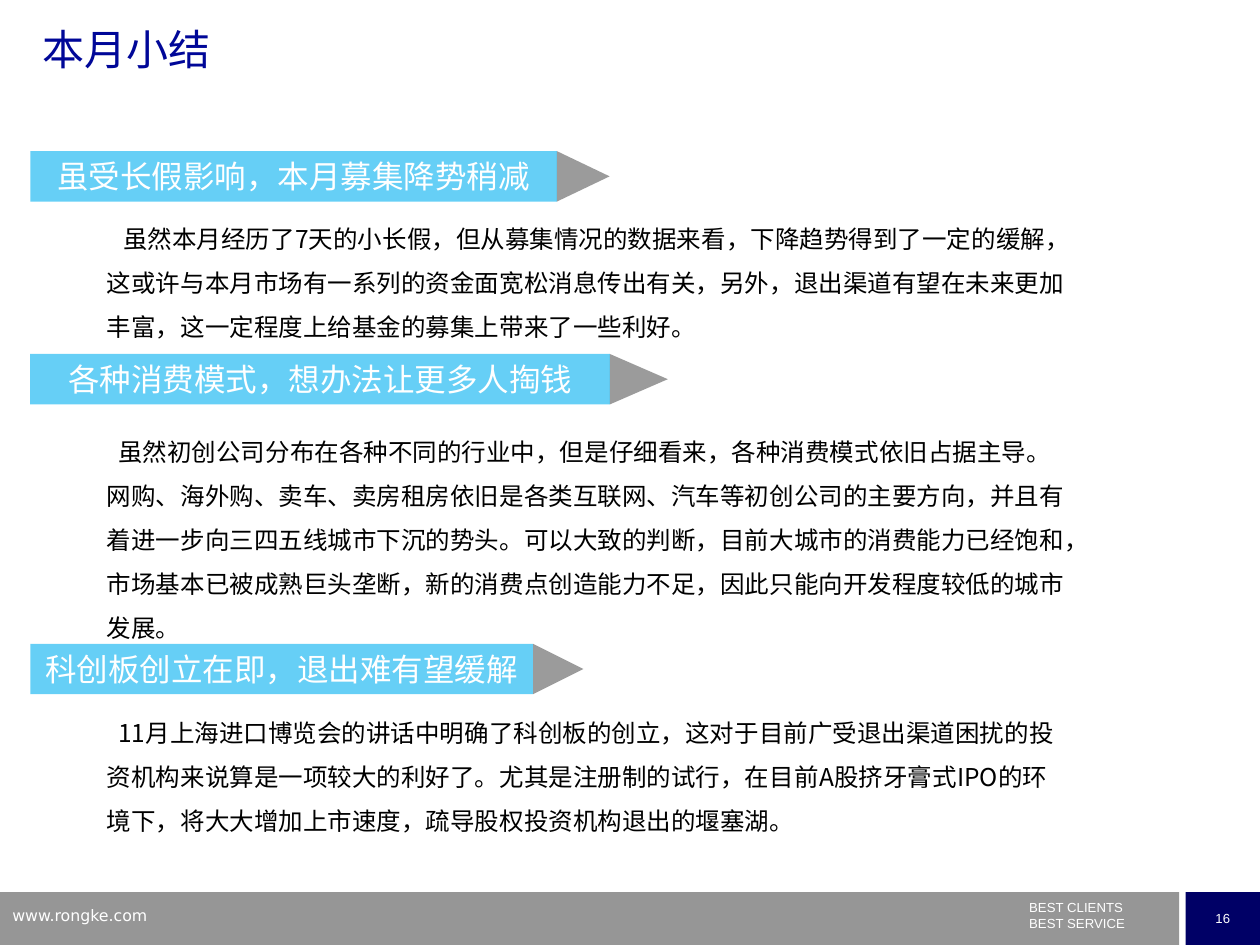
"""Build the monthly summary slide with three arrow headings and their paragraphs."""
from lxml import etree
from pptx import Presentation
from pptx import util as u
from pptx.dml.color import RGBColor
from pptx.enum import shapes, text
from pptx.oxml.ns import qn

COLORS = {"title": "000798", "bar": "00B0F0", "tip": "595959", "footer": "969696",
          "page": "000066", "white": "FFFFFF", "black": "000000"}
CJK = "Noto Sans CJK SC"
TITLE = "本月小结"
SECTIONS = [
    {"heading": "虽受长假影响，本月募集降势稍减", "top": 1.2, "width": 4.18,
     "body": "虽然本月经历了7天的小长假，但从募集情况的数据来看，下降趋势得到了一定的缓解，"
             "这或许与本月市场有一系列的资金面宽松消息传出有关，另外，退出渠道有望在未来更加"
             "丰富，这一定程度上给基金的募集上带来了一些利好。",
     "body_top": 1.61, "body_height": 1.11, "indent": 0.13},
    {"heading": "各种消费模式，想办法让更多人掏钱", "top": 2.81, "width": 4.6,
     "body": "虽然初创公司分布在各种不同的行业中，但是仔细看来，各种消费模式依旧占据主导。"
             "网购、海外购、卖车、卖房租房依旧是各类互联网、汽车等初创公司的主要方向，并且有"
             "着进一步向三四五线城市下沉的势头。可以大致的判断，目前大城市的消费能力已经饱和，"
             "市场基本已被成熟巨头垄断，新的消费点创造能力不足，因此只能向开发程度较低的城市"
             "发展。",
     "body_top": 3.3, "body_height": 1.81, "indent": 0.09},
    {"heading": "科创板创立在即，退出难有望缓解", "top": 5.11, "width": 3.99,
     "body": "11月上海进口博览会的讲话中明确了科创板的创立，这对于目前广受退出渠道困扰的投"
             "资机构来说算是一项较大的利好了。尤其是注册制的试行，在目前A股挤牙膏式IPO的"
             "环境下，将大大增加上市速度，疏导股权投资机构退出的堰塞湖。",
     "body_top": 5.53, "body_height": 1.11, "indent": 0.09},
]
WEBSITE = "www.rongke.com"
SLOGAN = ["BEST CLIENTS", "BEST SERVICE"]
PAGE_NUMBER = "16"
BAR_LEFT, BAR_HEIGHT, OPACITY = 0.24, 0.4, 60


def write(shape, lines, size, color, font=CJK, align=text.PP_ALIGN.LEFT,
          spacing=None, indent=0, wrap=True):
    frame = shape.text_frame
    frame.word_wrap = wrap
    frame.text = "\n".join(lines)
    for para in frame.paragraphs:
        para.alignment = align
        para.line_spacing = spacing
        if indent:
            para._p.get_or_add_pPr().set("indent", str(u.Inches(indent)))
        para.font.size = u.Pt(size)
        para.font.color.rgb = RGBColor.from_string(COLORS[color])
        para.font.name = font
        for span in para.runs:
            span.font.name = font
            east_asian = etree.SubElement(span._r.get_or_add_rPr(), qn("a:ea"))
            east_asian.set("typeface", font)
    return frame


def add_box(parent, left, top, width, height):
    return parent.add_textbox(*map(u.Inches, (left, top, width, height)))


def add_block(parent, kind, left, top, width, height, color, opacity=100):
    block = parent.add_shape(kind, *map(u.Inches, (left, top, width, height)))
    block.shadow.inherit = False
    block.fill.solid()
    block.fill.fore_color.rgb = RGBColor.from_string(COLORS[color])
    block.line.fill.background()
    if opacity < 100:
        fill_color = block._element.spPr.find(qn("a:solidFill"))[0]
        etree.SubElement(fill_color, qn("a:alpha")).set("val", str(opacity * 1000))
    block.text_frame.vertical_anchor = text.MSO_ANCHOR.MIDDLE
    return block


def add_footer(page):
    rectangle = shapes.MSO_SHAPE.RECTANGLE
    add_block(page.shapes, rectangle, 0, 7.08, 9.36, 0.42, "footer")
    number = add_block(page.shapes, rectangle, 9.41, 7.08, 0.59, 0.42, "page")
    write(number, [PAGE_NUMBER], 7.5, "white", "Arial", text.PP_ALIGN.CENTER, wrap=False)
    slogan = add_box(page.shapes, 8.07, 7.14, 1.5, 0.29)
    write(slogan, SLOGAN, 7.5, "white", "Arial").margin_top = 0
    write(add_box(page.shapes, 0, 7.14, 2.4, 0.26), [WEBSITE], 9, "white", "DejaVu Sans")


def add_section(page, section):
    top, width = section["top"], section["width"]
    arrow = page.shapes.add_group_shape().shapes
    bar = add_block(arrow, shapes.MSO_SHAPE.RECTANGLE, BAR_LEFT, top, width, BAR_HEIGHT,
                    "bar", OPACITY)
    write(bar, [section["heading"]], 18, "white", align=text.PP_ALIGN.CENTER)
    length = width / 10
    tip = add_block(arrow, shapes.MSO_SHAPE.ISOSCELES_TRIANGLE,
                    BAR_LEFT + width + (length - BAR_HEIGHT) / 2,
                    top + (BAR_HEIGHT - length) / 2, BAR_HEIGHT, length, "tip", OPACITY)
    tip.rotation = 90
    body = add_box(page.shapes, 0.75, section["body_top"], 7.84, section["body_height"])
    write(body, [section["body"]], 14, "black", spacing=1.5, indent=section["indent"])


def main():
    deck = Presentation()
    deck.slide_width, deck.slide_height = u.Inches(10), u.Inches(7.5)
    page = deck.slides.add_slide(deck.slide_layouts[6])
    add_footer(page)
    write(add_box(page.shapes, 0.24, 0.14, 1.56, 0.5), [TITLE], 24, "title", wrap=False)
    for section in SECTIONS:
        add_section(page, section)
    deck.save("out.pptx")


if __name__ == "__main__":
    main()
